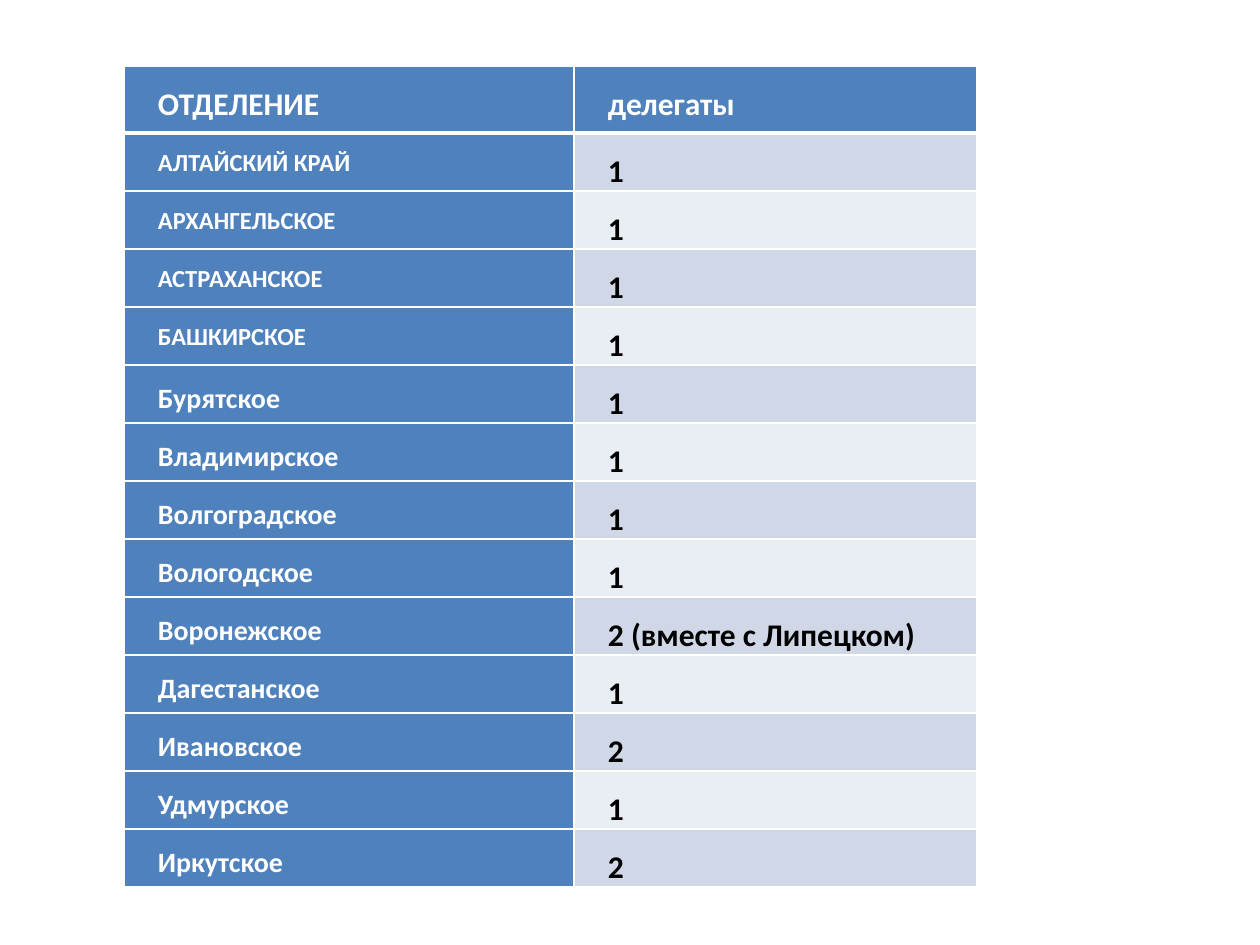
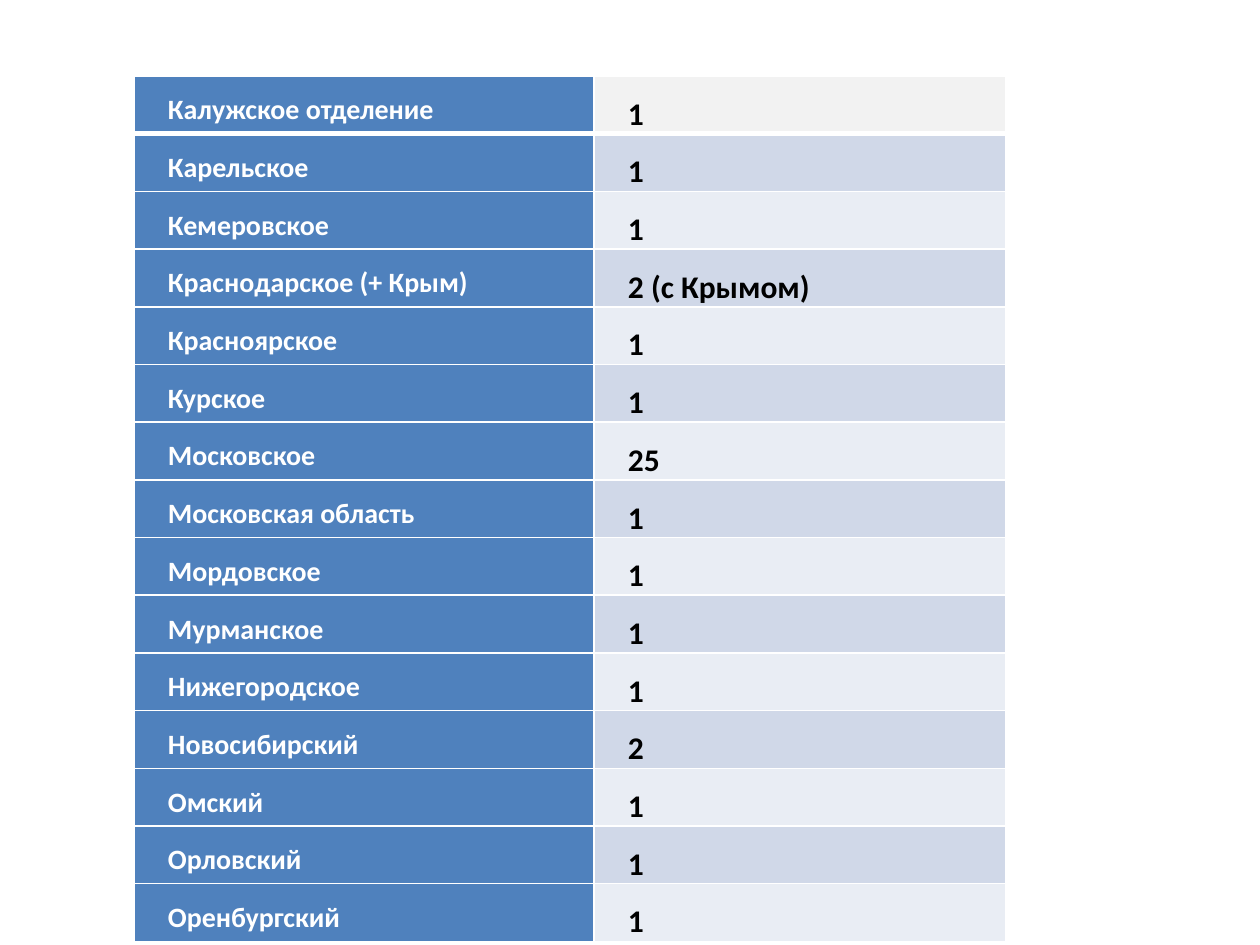
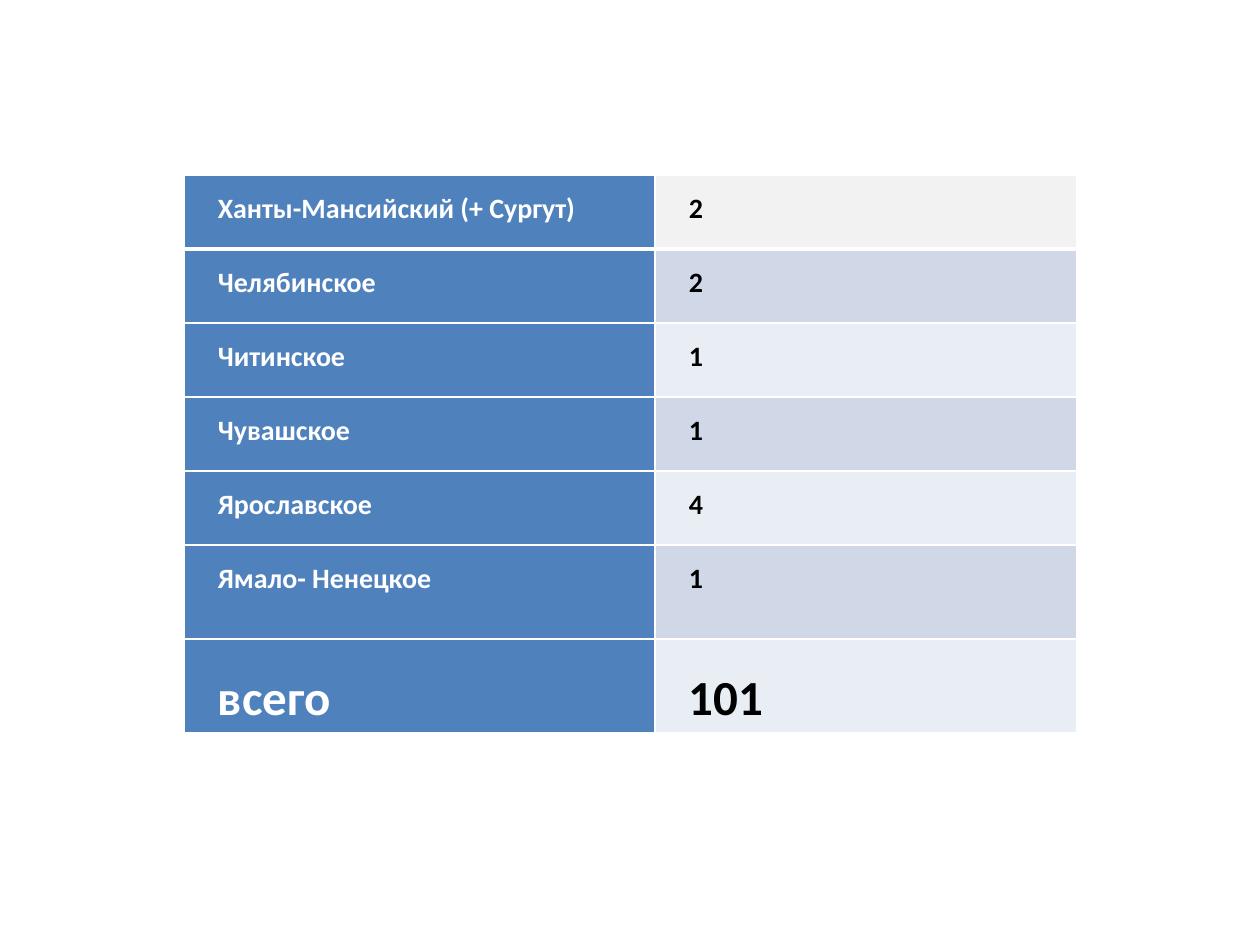
"""Build three slides listing the number of delegates from each regional branch."""
from dataclasses import dataclass

from lxml.etree import SubElement
from pptx import Presentation
from pptx.dml.color import RGBColor
from pptx.enum.text import PP_ALIGN
from pptx.oxml.ns import qn
from pptx.util import Pt

PX = 914400 / 126


@dataclass(frozen=True)
class Theme:
    font: str = "Calibri"
    blue: str = "4F81BD"
    white: str = "FFFFFF"
    black: str = "000000"
    gray: str = "F2F2F2"
    bands: tuple = ("E9EDF4", "D0D8E8")
    small: int = 14
    label: int = 16
    value: int = 18
    total: int = 28
    thin: int = 1
    thick: int = 3


theme = Theme()


def px(length):
    return round(length * PX)


def style_cell(cell, text, size, color, fill, top, bottom):
    cell.margin_left = cell.margin_right = px(9)
    cell.margin_top = cell.margin_bottom = 0
    paragraph = cell.text_frame.paragraphs[0]
    paragraph.text = text
    paragraph.alignment = PP_ALIGN.JUSTIFY
    paragraph.line_spacing = 1.5
    paragraph._p.get_or_add_pPr().set("indent", str(px(25)))
    paragraph.font.name = theme.font
    paragraph.font.size = Pt(size)
    paragraph.font.bold = True
    paragraph.font.color.rgb = RGBColor.from_string(color)
    properties = cell._tc.get_or_add_tcPr()
    borders = {"a:lnL": theme.thin, "a:lnR": theme.thin, "a:lnT": top, "a:lnB": bottom}
    for tag, width in borders.items():
        line = SubElement(properties, qn(tag), w=str(Pt(width)))
        solid = SubElement(line, qn("a:solidFill"))
        SubElement(solid, qn("a:srgbClr"), val=theme.white)
    cell.fill.solid()
    cell.fill.fore_color.rgb = RGBColor.from_string(fill)


SMALL = (theme.small, theme.value)
NORMAL = (theme.label, theme.value)
EVEN = (theme.label, theme.label)
TOTAL = (theme.total, theme.total)

delegate_tables = [
    {
        "left": 124, "top": 66, "columns": (450, 403),
        "heights": [67] + [58] * 13,
        "sizes": [(theme.value, theme.value)] + [SMALL] * 4 + [NORMAL] * 9,
        "first_value": (theme.white, theme.blue),
        "rows": [
            ("ОТДЕЛЕНИЕ", "делегаты"),
            ("АЛТАЙСКИЙ КРАЙ", "1"),
            ("АРХАНГЕЛЬСКОЕ", "1"),
            ("АСТРАХАНСКОЕ", "1"),
            ("БАШКИРСКОЕ", "1"),
            ("Бурятское", "1"),
            ("Владимирское", "1"),
            ("Волгоградское", "1"),
            ("Вологодское", "1"),
            ("Воронежское", "2 (вместе с Липецком)"),
            ("Дагестанское", "1"),
            ("Ивановское", "2"),
            ("Удмурское", "1"),
            ("Иркутское", "2"),
        ],
    },
    {
        "left": 134, "top": 76, "columns": (460, 412),
        "heights": [53] * 15,
        "sizes": [NORMAL] * 15,
        "first_value": (theme.black, theme.gray),
        "rows": [
            ("Калужское отделение", "1"),
            ("Карельское", "1"),
            ("Кемеровское", "1"),
            ("Краснодарское (+ Крым)", "2 (с Крымом)"),
            ("Красноярское", "1"),
            ("Курское", "1"),
            ("Московское", "25"),
            ("Московская область", "1"),
            ("Мордовское", "1"),
            ("Мурманское", "1"),
            ("Нижегородское", "1"),
            ("Новосибирский", "2"),
            ("Омский", "1"),
            ("Орловский", "1"),
            ("Оренбургский", "1"),
        ],
    },
    {
        "left": 184, "top": 175, "columns": (471, 422),
        "heights": [74] * 5 + [94] * 2,
        "sizes": [EVEN] * 6 + [TOTAL],
        "first_value": (theme.black, theme.gray),
        "rows": [
            ("Ханты-Мансийский (+ Сургут)", "2"),
            ("Челябинское", "2"),
            ("Читинское", "1"),
            ("Чувашское", "1"),
            ("Ярославское", "4"),
            ("Ямало- Ненецкое", "1"),
            ("всего", "101"),
        ],
    },
]

presentation = Presentation()
presentation.slide_width = px(1260)
presentation.slide_height = px(945)

for data in delegate_tables:
    slide = presentation.slides.add_slide(presentation.slide_layouts[6])
    rows, heights = data["rows"], data["heights"]
    table = slide.shapes.add_table(
        len(rows), 2, px(data["left"]), px(data["top"]),
        px(sum(data["columns"])), px(sum(heights)),
    ).table
    table.first_col = True
    for column, width in zip(table.columns, data["columns"]):
        column.width = px(width)
    for index, (label, value) in enumerate(rows):
        table.rows[index].height = px(heights[index])
        label_size, value_size = data["sizes"][index]
        value_color, value_fill = theme.black, theme.bands[index % 2]
        if index == 0:
            value_color, value_fill = data["first_value"]
        top = theme.thick if index == 1 else theme.thin
        bottom = theme.thick if index == 0 else theme.thin
        style_cell(table.cell(index, 0), label, label_size, theme.white, theme.blue, top, bottom)
        style_cell(table.cell(index, 1), value, value_size, value_color, value_fill, top, bottom)

presentation.save("out.pptx")
